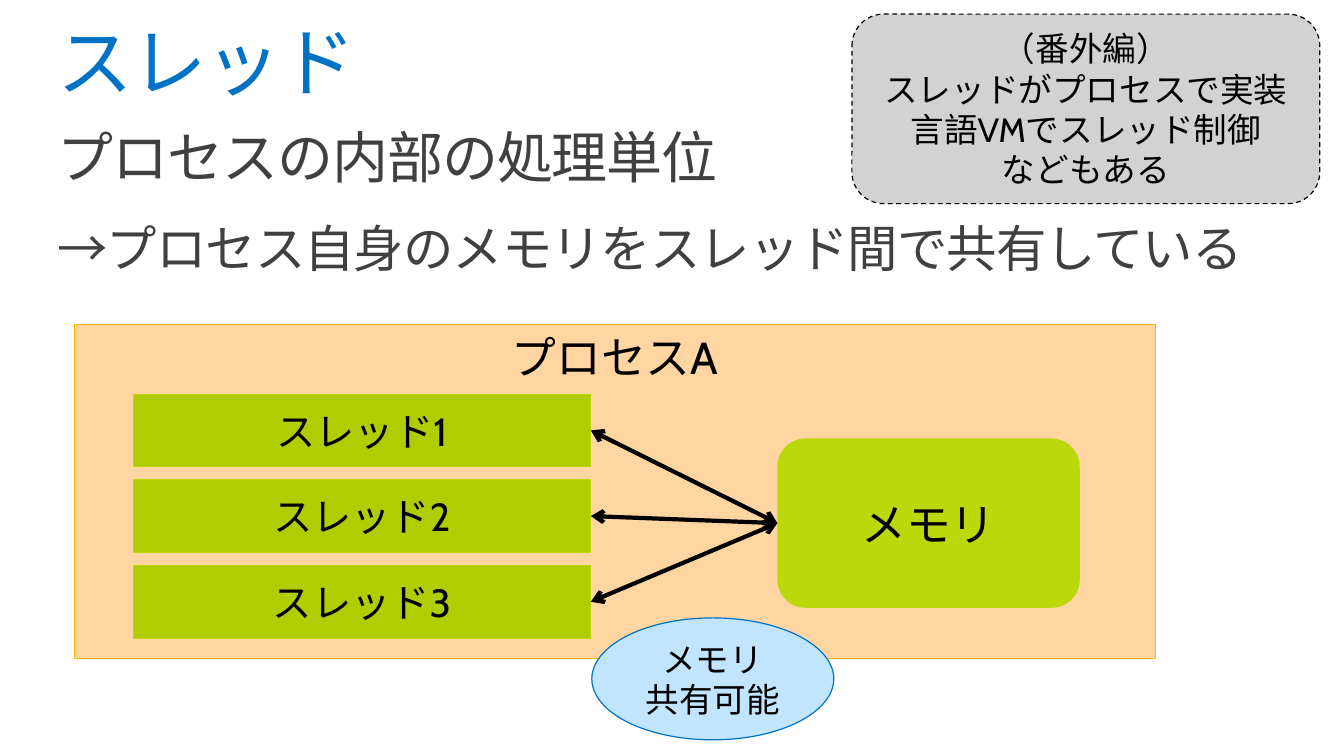
from pptx import Presentation
from pptx.dml.color import RGBColor
from pptx.enum import dml, shapes, text
from pptx.oxml.ns import qn
from pptx.util import Inches, Pt
from lxml import etree

# Content
TITLE = "スレッド"
BODY = [("プロセスの内部の処理単位", 40), ("→プロセス自身のメモリをスレッド間で共有している", 36)]
PROCESS = ["プロセスA"]
THREADS = ["スレッド1", "スレッド2", "スレッド3"]
MEMORY = ["メモリ"]
SHARED = ["メモリ", "共有可能"]
ASIDE = ["（番外編）", "スレッドがプロセスで実装", "言語VMでスレッド制御", "などもある"]

THEME = dict(
    font="Cabin", ink="000000", title="0072C6", body="404040",
    process="FFD5A2", process_line="FFB900", thread="AFCD00", memory="BAD80A",
    shared="C1E5FF", aside="D2D2D2",
    title_size=54, box_size=32, thread_size=28, note_size=24,
)

# Layout, in inches
THREAD_LEFT, THREAD_TOP, THREAD_W, THREAD_H, THREAD_PITCH = 1.32, 3.91, 4.54, 0.72, 0.85

prs = Presentation()
prs.slide_width, prs.slide_height = Inches(13.33), Inches(7.5)
s = prs.slides.add_slide(prs.slide_layouts[6])
KINDS = shapes.MSO_SHAPE


def rgb(name):
    return RGBColor.from_string(THEME[name])


def set_margins(tf, inset):
    tf.word_wrap = True
    tf.margin_left = tf.margin_right = tf.margin_top = tf.margin_bottom = Inches(inset)


def add_line(tf, index, line, size, color):
    p = tf.paragraphs[0] if index == 0 else tf.add_paragraph()
    p.text = line
    p.font.name, p.font.size = THEME["font"], Pt(size)
    p.font.color.rgb = rgb(color)
    return p


def add_heading(box, lines, color, spacing, before=0):
    tf = s.shapes.add_textbox(*map(Inches, box)).text_frame
    set_margins(tf, 0)
    for i, (line, size) in enumerate(lines):
        p = add_line(tf, i, line, size, color)
        p.line_spacing, p.space_before = 0.9, Pt(before)
        p.runs[0].font._element.set("spc", str(spacing))


def add_box(kind, box, lines, size, fill, line=None, width=0.75, anchor=text.MSO_ANCHOR.MIDDLE):
    sp = s.shapes.add_shape(kind, *map(Inches, box))
    sp.shadow.inherit = False
    sp.fill.solid()
    sp.fill.fore_color.rgb = rgb(fill)
    if line:
        sp.line.color.rgb, sp.line.width = rgb(line), Pt(width)
    else:
        sp.line.fill.background()
    tf = sp.text_frame
    set_margins(tf, 0.05)
    tf.vertical_anchor = anchor
    for i, content in enumerate(lines):
        add_line(tf, i, content, size, "ink").alignment = text.PP_ALIGN.CENTER
    return sp


def add_double_arrow(start, end):
    left, right = 1, 3  # connection sites
    c = s.shapes.add_connector(shapes.MSO_CONNECTOR.STRAIGHT, 0, 0, 0, 0)
    c.begin_connect(start, left)
    c.end_connect(end, right)
    c.line.color.rgb, c.line.width = rgb("ink"), Pt(3)
    ln = c.line._get_or_add_ln()
    for tag in ("a:headEnd", "a:tailEnd"):
        etree.SubElement(ln, qn(tag)).set("type", "arrow")
    etree.SubElement(c._element.spPr, qn("a:effectLst"))


# Headings
add_heading((0.57, 1.29, 12.19, 5.24), BODY, "body", -70, before=24)
add_heading((0.57, 0.25, 12.19, 0.82), [(TITLE, THEME["title_size"])], "title", -100)

# Process with its threads
add_box(KINDS.RECTANGLE, (0.74, 3.22, 10.72, 3.31), PROCESS, THEME["box_size"],
        "process", "process_line", anchor=text.MSO_ANCHOR.TOP)
threads = [
    add_box(KINDS.RECTANGLE, (THREAD_LEFT, THREAD_TOP + i * THREAD_PITCH, THREAD_W, THREAD_H),
            [name], THEME["thread_size"], "thread", "memory")
    for i, name in enumerate(THREADS)
]

# Shared memory
add_box(KINDS.OVAL, (5.87, 6.13, 2.4, 1.21), SHARED, THEME["note_size"], "shared", "title", 0.85)
memory = add_box(KINDS.ROUNDED_RECTANGLE, (7.71, 4.35, 3, 1.68), MEMORY, THEME["box_size"], "memory")
for thread in threads:
    add_double_arrow(memory, thread)

# Side note
aside = add_box(KINDS.ROUNDED_RECTANGLE, (8.45, 0.14, 4.64, 1.88), ASIDE, THEME["note_size"],
                "aside", "ink", 0.85)
aside.line.dash_style = dml.MSO_LINE.DASH

prs.save("out.pptx")
